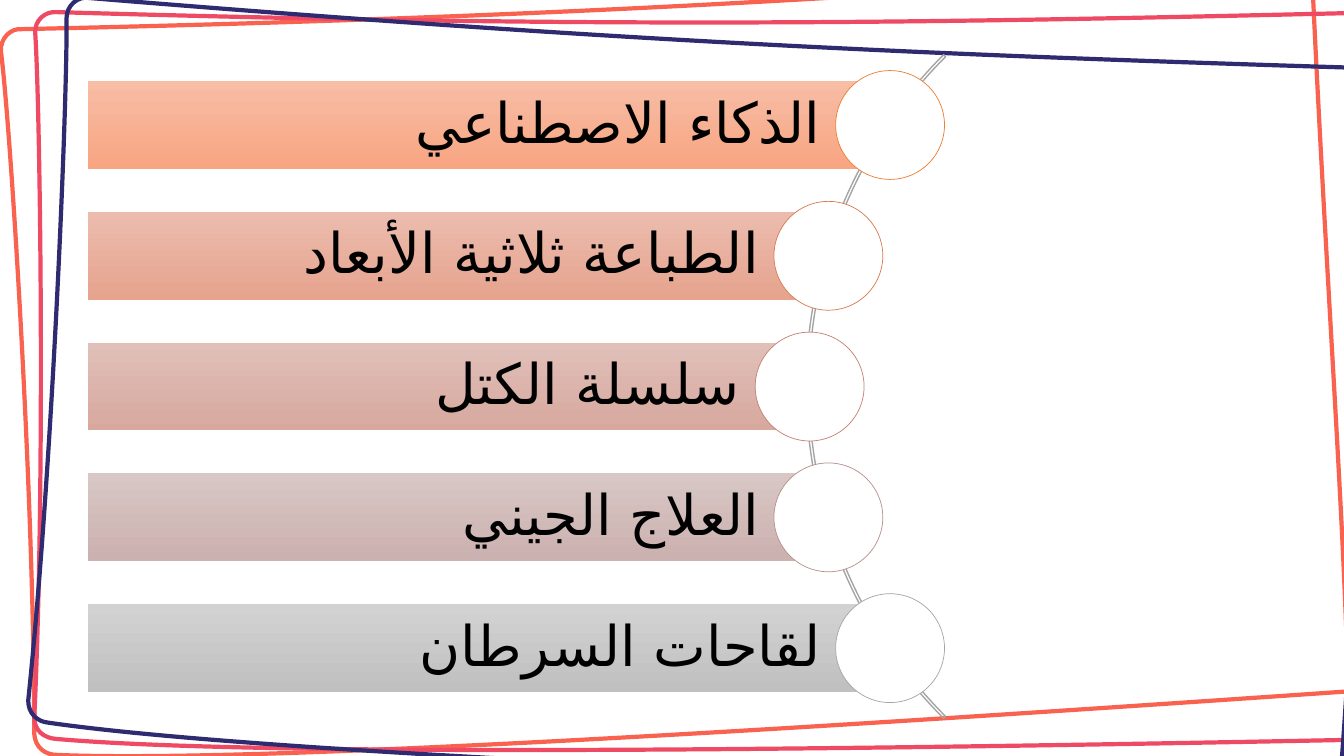
import math

from lxml import etree
from pptx import Presentation
from pptx import util as u
from pptx.dml.color import RGBColor
from pptx.enum import shapes, text
from pptx.oxml.ns import qn

FONT = "Roboto"
ARABIC_FONT = "DejaVu Sans"

# Each frame: colour, start point, then cubic curves (two controls and an end).
FRAMES = [
    ("FA6250", (0.21, 0.29), [
        [(5.7, 0.17), (8.79, -0.04), (13.01, -0.34)],
        [(13.14, 2.57), (13.34, 5.24), (13.37, 6.86)],
        [(7.85, 7.24), (2.5, 7.57), (0.57, 7.49)],
        [(0.45, 7.49), (0.35, 7.42), (0.34, 7.28)],
        [(0.34, 4.98), (0.11, 1.3), (0.01, 0.51)],
        [(0, 0.38), (0.11, 0.28), (0.21, 0.29)],
    ]),
    ("EF4A63", (0.56, 0.12), [
        [(6.04, 0.28), (9.15, 0.23), (13.37, 0.13)],
        [(13.36, 3.05), (13.42, 5.73), (13.37, 7.34)],
        [(7.83, 7.45), (2.48, 7.5), (0.55, 7.33)],
        [(0.44, 7.32), (0.34, 7.25), (0.34, 7.12)],
        [(0.45, 4.81), (0.4, 1.13), (0.35, 0.33)],
        [(0.34, 0.2), (0.45, 0.11), (0.56, 0.12)],
    ]),
    ("2F2B70", (0.88, -0.02), [
        [(6.35, 0.43), (9.45, 0.55), (13.67, 0.68)],
        [(13.51, 3.6), (13.42, 6.27), (13.28, 7.88)],
        [(7.75, 7.68), (2.4, 7.45), (0.48, 7.17)],
        [(0.37, 7.16), (0.28, 7.08), (0.28, 6.95)],
        [(0.52, 4.66), (0.67, 0.97), (0.66, 0.18)],
        [(0.66, 0.05), (0.78, -0.04), (0.88, -0.02)],
    ]),
]

# Each topic: wording, bar gradient top and bottom, circle outline.
TOPICS = [
    ("الذكاء الاصطناعي", "F7BDA5", "F8A582", "ED7D31"),
    ("الطباعة ثلاثية الأبعاد", "EBBCAE", "E6A38E", "D87A51"),
    ("سلسلة الكتل", "E0C0B9", "D7A89E", "C48170"),
    ("العلاج الجيني", "D8C7C5", "CBB1AF", "B4908B"),
    ("لقاحات السرطان", "D2D2D2", "C0C0C0", "A5A5A5"),
]


def rgb(hex_colour):
    return RGBColor.from_string(hex_colour)


def set_outline(shape, colour, points):
    shape.shadow.inherit = False
    shape.line.color.rgb = rgb(colour)
    shape.line.width = u.Pt(points)


def add_preset(slide, kind, left, top, width, height):
    return slide.shapes.add_shape(kind, u.Inches(left), u.Inches(top),
                                  u.Inches(width), u.Inches(height))


def add_frame(slide, colour, start, curves):
    """Join the curve ends by straight lines, then bend each line by its controls."""
    builder = slide.shapes.build_freeform(u.Inches(start[0]), u.Inches(start[1]))
    builder.add_line_segments([(u.Inches(x), u.Inches(y)) for _, _, (x, y) in curves])
    frame = builder.convert_to_shape()
    for side, (*controls, _) in zip(list(frame._element.iter(qn("a:lnTo"))), curves):
        side.tag = qn("a:cubicBezTo")
        for index, (x, y) in enumerate(controls):
            point = etree.Element(qn("a:pt"))
            point.set("x", str(u.Inches(x) - frame.left))
            point.set("y", str(u.Inches(y) - frame.top))
            side.insert(index, point)
    frame.fill.background()
    set_outline(frame, colour, 3)


def add_topic_bar(slide, left, top, width, height, wording, light, dark):
    bar = add_preset(slide, shapes.MSO_SHAPE.RECTANGLE, left, top, width, height)
    bar.shadow.inherit = False
    bar.line.fill.background()
    bar.fill.gradient()
    bar.fill.gradient_angle = 270
    for stop, colour in zip(bar.fill.gradient_stops, (light, dark)):
        stop.color.rgb = rgb(colour)

    frame = bar.text_frame
    frame.word_wrap = True
    frame.vertical_anchor = text.MSO_ANCHOR.MIDDLE
    frame.margin_left = frame.margin_top = frame.margin_bottom = u.Inches(0.11)
    frame.margin_right = u.Inches(0.69)
    paragraph = frame.paragraphs[0]
    paragraph.alignment = text.PP_ALIGN.RIGHT
    paragraph.line_spacing = 0.9
    paragraph._p.get_or_add_pPr().set("rtl", "1")
    run = paragraph.add_run()
    run.text = wording
    run.font.size = u.Pt(40)
    run.font.name = FONT
    run.font.color.rgb = rgb("000000")
    etree.SubElement(run._r.get_or_add_rPr(), qn("a:cs")).set("typeface", ARABIC_FONT)


def add_topic_list(slide, left, top, width, height):
    """Bars end at circles strung along an arc that bulges to the left."""
    arc_size, orbit = 9.31, 4.62
    bar_height, circle_size = 0.87, 1.08
    centre_x = left + width + 3.27
    centre_y = top + height / 2
    arc = add_preset(slide, shapes.MSO_SHAPE.BLOCK_ARC, centre_x - arc_size / 2,
                     centre_y - arc_size / 2, arc_size, arc_size)
    # Two angles in 60000ths of a degree over 100000, then the band thickness
    for index, value in enumerate((81, 135, 0.003)):
        arc.adjustments[index] = value
    arc.fill.background()
    set_outline(arc, "A5A5A5", 1)

    pitch = (height - circle_size) / (len(TOPICS) - 1)
    for row, (wording, light, dark, outline) in enumerate(TOPICS):
        y = top + circle_size / 2 + row * pitch
        x = centre_x - math.sqrt(orbit ** 2 - (y - centre_y) ** 2)
        add_topic_bar(slide, left, y - bar_height / 2, x - left, bar_height,
                      wording, light, dark)
        circle = add_preset(slide, shapes.MSO_SHAPE.OVAL, x - circle_size / 2,
                            y - circle_size / 2, circle_size, circle_size)
        circle.fill.solid()
        circle.fill.fore_color.rgb = rgb("FFFFFF")
        set_outline(circle, outline, 0.5)


def main():
    deck = Presentation()
    deck.slide_width, deck.slide_height = u.Inches(13.33), u.Inches(7.5)
    slide = deck.slides.add_slide(deck.slide_layouts[6])
    for frame in FRAMES:
        add_frame(slide, *frame)
    add_topic_list(slide, 0.87, 0.7, 8.51, 6.27)
    deck.save("out.pptx")


if __name__ == "__main__":
    main()
